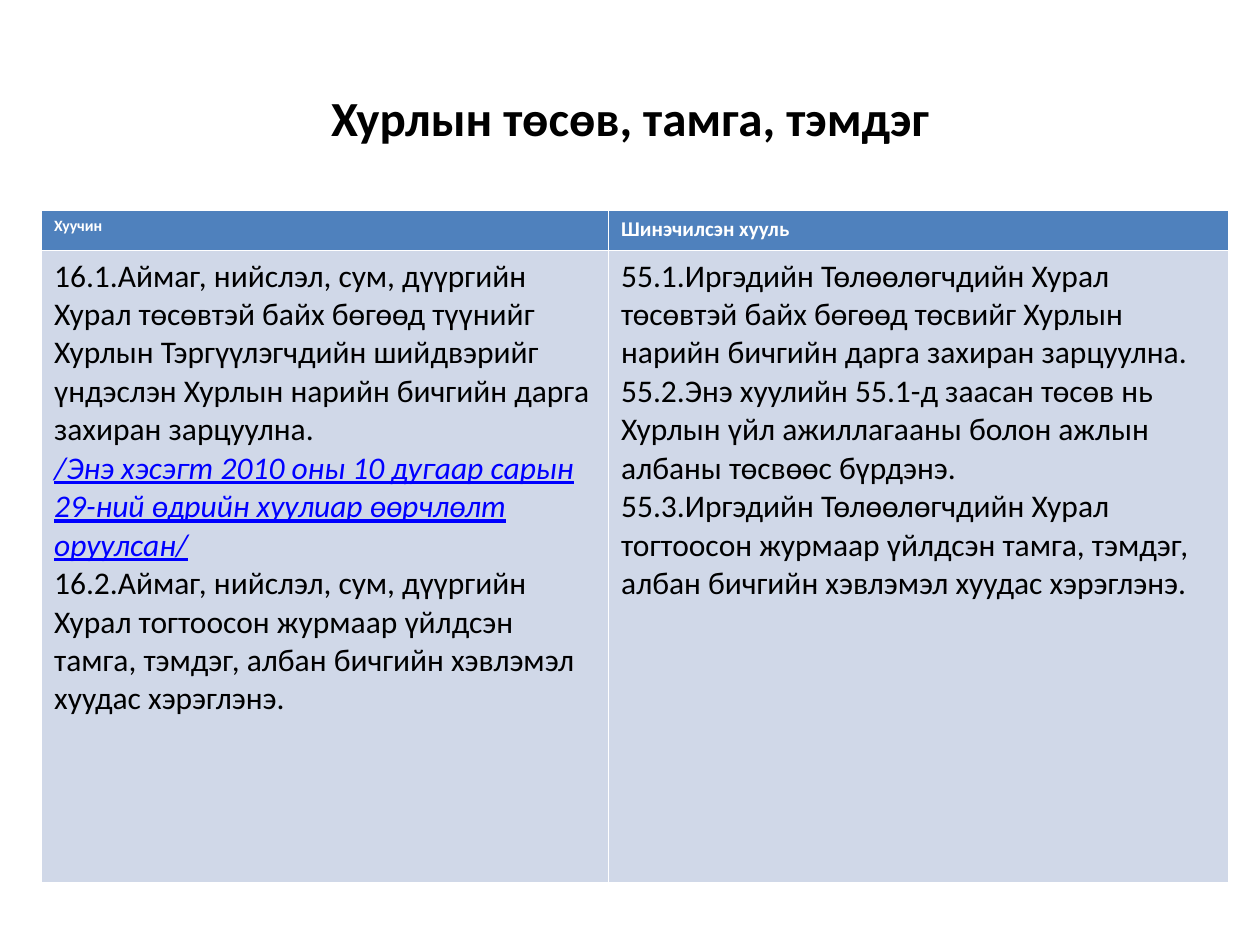
"""Build a slide comparing the old and revised law on the council's budget and seal."""
from pptx import Presentation
from pptx.dml.color import RGBColor
from pptx.enum.text import MSO_ANCHOR, PP_ALIGN
from pptx.util import Inches, Pt

COLORS = {"title": "000000", "header": "4F81BD", "header_text": "FFFFFF",
          "body": "D0D8E8", "body_text": "000000", "amendment": "0000FF"}
FONT = "Calibri"
TITLE = "Хурлын төсөв, тамга, тэмдэг"
AMENDMENT = {"color": "amendment", "italic": True, "underline": True}
ROW_HEIGHTS = (0.32, 5.02)
LAWS = [
    {"heading": "Хуучин", "heading_size": 9, "width": 4.5, "clauses": [
        ("16.1.Аймаг, нийслэл, сум, дүүргийн Хурал төсөвтэй байх бөгөөд түүнийг Хурлын "
         "Тэргүүлэгчдийн шийдвэрийг үндэслэн Хурлын нарийн бичгийн дарга захиран зарцуулна.", {}),
        ("/Энэ хэсэгт 2010 оны 10 дугаар сарын 29-ний өдрийн хуулиар өөрчлөлт оруулсан/",
         AMENDMENT),
        ("16.2.Аймаг, нийслэл, сум, дүүргийн Хурал тогтоосон журмаар үйлдсэн тамга, тэмдэг, "
         "албан бичгийн хэвлэмэл хуудас хэрэглэнэ.", {}),
    ]},
    {"heading": "Шинэчилсэн хууль", "heading_size": 12, "width": 4.92, "clauses": [
        ("55.1.Иргэдийн Төлөөлөгчдийн Хурал төсөвтэй байх бөгөөд төсвийг Хурлын нарийн "
         "бичгийн дарга захиран зарцуулна.", {}),
        ("55.2.Энэ хуулийн 55.1-д заасан төсөв нь Хурлын үйл ажиллагааны болон ажлын албаны "
         "төсвөөс бүрдэнэ.", {}),
        ("55.3.Иргэдийн Төлөөлөгчдийн Хурал тогтоосон журмаар үйлдсэн тамга, тэмдэг, албан "
         "бичгийн хэвлэмэл хуудас хэрэглэнэ.", {}),
    ]},
]


def write(paragraph, text, size=18, color="body_text", bold=False, italic=False,
          underline=False, align=PP_ALIGN.LEFT):
    paragraph.alignment = align
    run = paragraph.add_run()
    run.text = text
    font = run.font
    font.name, font.size = FONT, Pt(size)
    font.bold, font.italic, font.underline = bold, italic, underline
    font.color.rgb = RGBColor.from_string(COLORS[color])


def fill_cell(cell, color):
    cell.fill.solid()
    cell.fill.fore_color.rgb = RGBColor.from_string(COLORS[color])


def main():
    prs = Presentation()
    prs.slide_width, prs.slide_height = Inches(10), Inches(7.5)
    slide = prs.slides.add_slide(prs.slide_layouts[6])

    title = slide.shapes.add_textbox(Inches(0.5), Inches(0.3), Inches(9), Inches(1.25)).text_frame
    title.word_wrap = True
    title.vertical_anchor = MSO_ANCHOR.MIDDLE
    write(title.paragraphs[0], TITLE, size=28, color="title", bold=True, align=PP_ALIGN.CENTER)

    comparison = slide.shapes.add_table(
        len(ROW_HEIGHTS), len(LAWS), Inches(0.33), Inches(1.67),
        Inches(sum(law["width"] for law in LAWS)), Inches(sum(ROW_HEIGHTS))).table
    for row, height in zip(comparison.rows, ROW_HEIGHTS):
        row.height = Inches(height)

    for col, law in enumerate(LAWS):
        comparison.columns[col].width = Inches(law["width"])
        header, body = comparison.cell(0, col), comparison.cell(1, col)
        fill_cell(header, "header")
        write(header.text_frame.paragraphs[0], law["heading"], size=law["heading_size"],
              color="header_text", bold=True)
        fill_cell(body, "body")
        for i, (clause, style) in enumerate(law["clauses"]):
            frame = body.text_frame
            write(frame.add_paragraph() if i else frame.paragraphs[0], clause, **style)

    prs.save("out.pptx")


if __name__ == "__main__":
    main()
